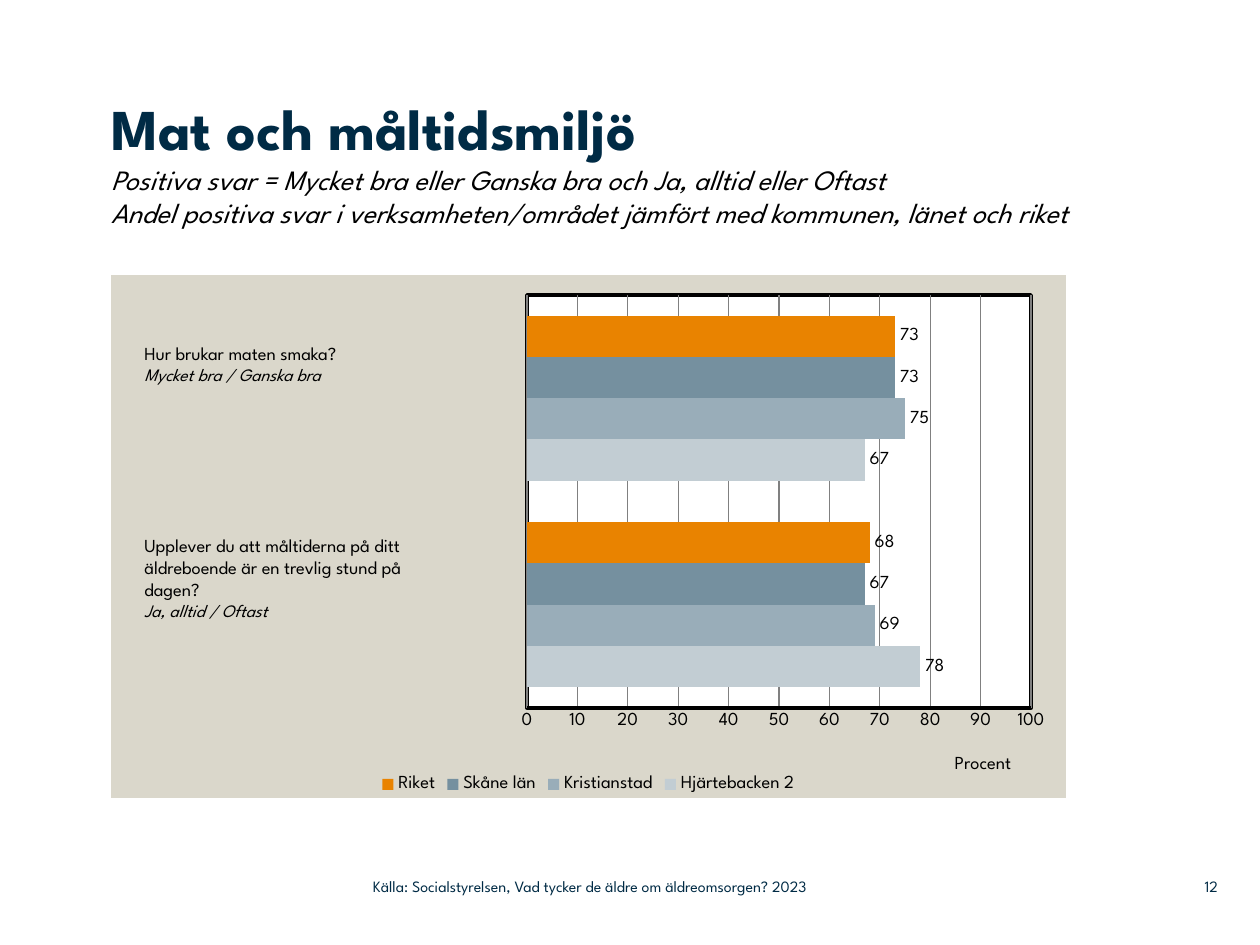
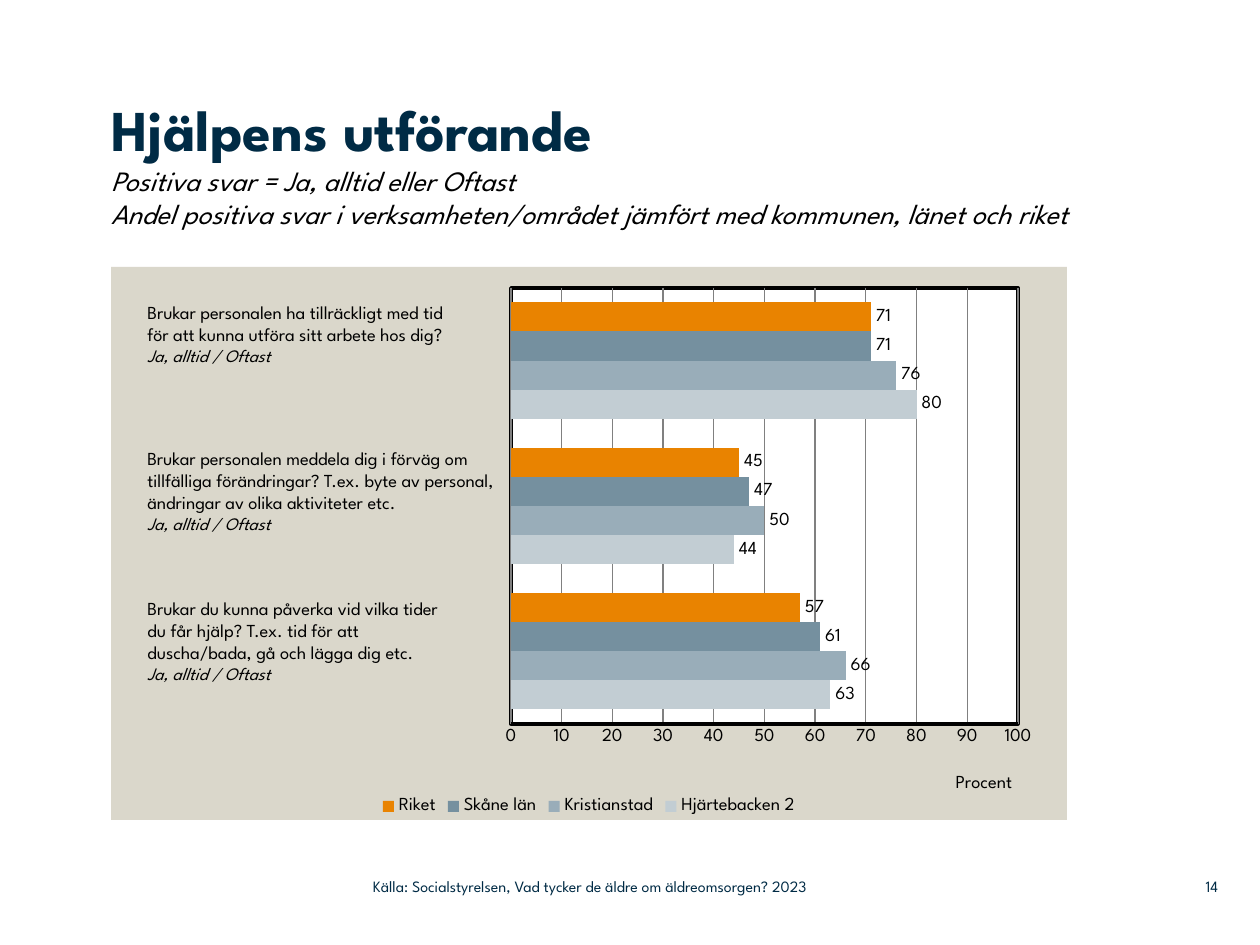
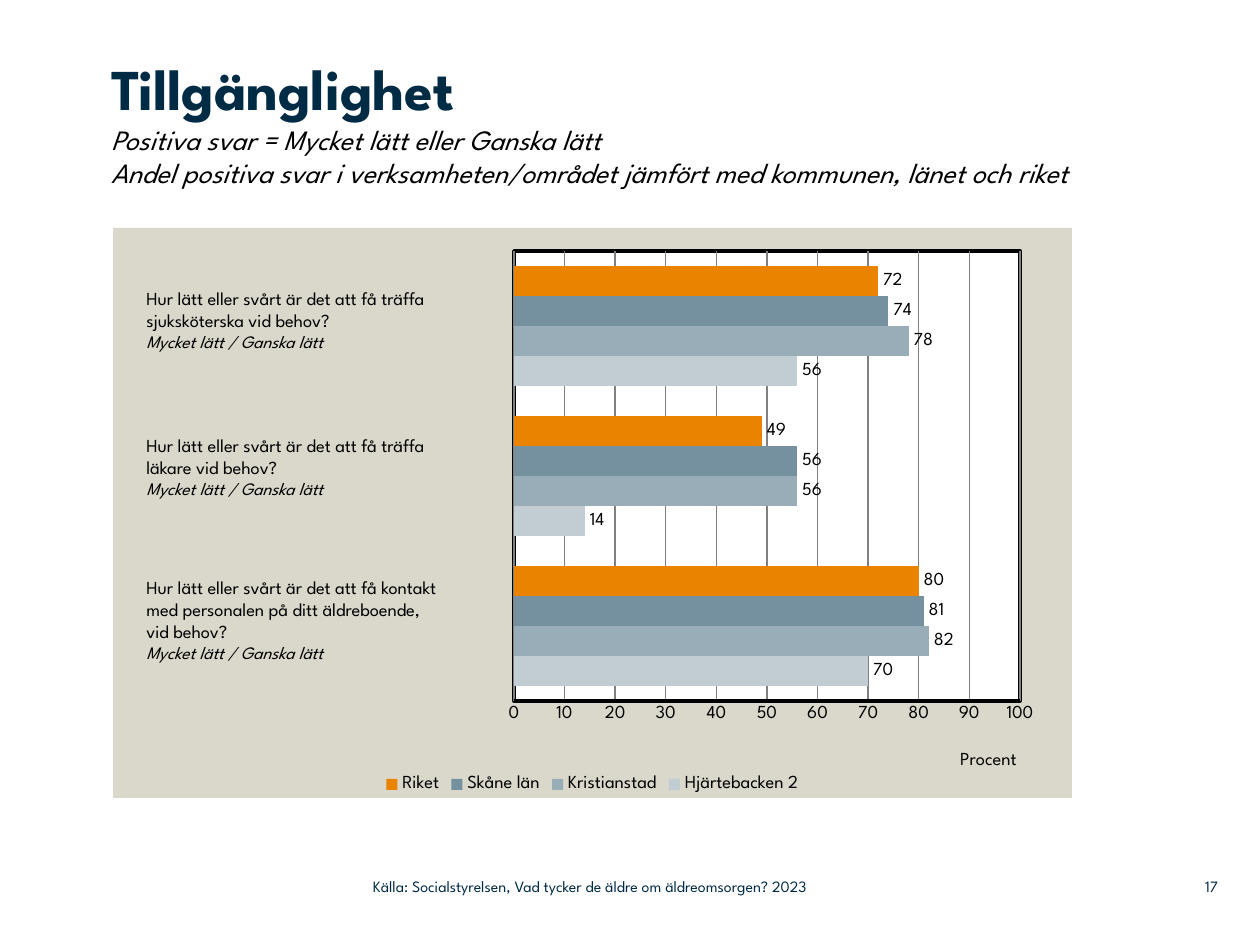
from dataclasses import dataclass
from copy import deepcopy

from lxml import etree
from pptx import Presentation
from pptx.chart.data import CategoryChartData
from pptx.dml.color import RGBColor
from pptx.enum.chart import (XL_CHART_TYPE, XL_LABEL_POSITION,
                             XL_LEGEND_POSITION, XL_TICK_MARK)
from pptx.enum.text import MSO_ANCHOR, MSO_AUTO_SIZE, PP_ALIGN
from pptx.oxml import parse_xml
from pptx.util import Emu, Pt

BARS = XL_CHART_TYPE.BAR_CLUSTERED
OUTSIDE_END = XL_LABEL_POSITION.OUTSIDE_END
LEGEND_BOTTOM = XL_LEGEND_POSITION.BOTTOM
NO_TICK = XL_TICK_MARK.NONE
TOP, MIDDLE = MSO_ANCHOR.TOP, MSO_ANCHOR.MIDDLE
FIXED, GROW = MSO_AUTO_SIZE.NONE, MSO_AUTO_SIZE.SHAPE_TO_FIT_TEXT
LEFT, RIGHT = PP_ALIGN.LEFT, PP_ALIGN.RIGHT

PX_PER_INCH = 126
TITLE_ONLY = 5
CHART_NS = "http://schemas.openxmlformats.org/drawingml/2006/chart"
DRAWING_NS = "http://schemas.openxmlformats.org/drawingml/2006/main"


@dataclass(frozen=True)
class Theme:
    font: str = "League Spartan"
    navy: str = "002B45"
    black: str = "000000"
    white: str = "FFFFFF"
    panel: str = "DAD7CB"
    grid: str = "808080"
    title_size: float = 33
    subtitle_size: float = 16
    body_size: float = 10.5
    answer_size: float = 10
    footer_size: float = 9


@dataclass
class Question:
    box: tuple      # left, top, width, height
    lines: list
    answer: str
    values: tuple   # one per region, top bar first


@dataclass
class Survey:
    number: int
    title: str
    positive: str
    title_box: tuple
    chart_box: tuple
    plot_box: tuple  # within the chart
    questions: list


THEME = Theme()
REGIONS = [("Riket", "E98300"), ("Skåne län", "75909F"),
           ("Kristianstad", "99ADB9"), ("Hjärtebacken 2", "C2CDD3")]
COMPARISON = ("Andel positiva svar i verksamheten/området jämfört med "
              "kommunen, länet och riket")
SOURCE = "Källa: Socialstyrelsen, Vad tycker de äldre om äldreomsorgen? 2023"
SOURCE_BOX = (373, 868, 558, 37)
NUMBER_BOX = (1159, 868, 59, 37)

SURVEYS = [
    Survey(12, "Mat och måltidsmiljö",
           "Positiva svar = Mycket bra eller Ganska bra och Ja, alltid eller Oftast",
           (111, 93, 1061, 181), (111, 275, 955, 523), (416, 20, 504, 413), [
               Question((132, 336, 349, 79), ["Hur brukar maten smaka?"],
                        "Mycket bra / Ganska bra", (73, 73, 75, 67)),
               Question((132, 528, 349, 123),
                        ["Upplever du att måltiderna på ditt äldreboende är "
                         "en trevlig stund på", "dagen?"],
                        "Ja, alltid / Oftast", (68, 67, 69, 78)),
           ]),
    Survey(14, "Hjälpens utförande", "Positiva svar = Ja, alltid eller Oftast",
           (111, 94, 982, 152), (111, 267, 956, 553), (400, 21, 507, 436), [
               Question((135, 295, 374, 102),
                        ["Brukar personalen ha tillräckligt med tid",
                         "för att kunna utföra sitt arbete hos dig?"],
                        "Ja, alltid / Oftast", (71, 71, 76, 80)),
               Question((135, 441, 377, 123),
                        ["Brukar personalen meddela dig i förväg om tillfälliga "
                         "förändringar? T.ex. byte av personal, ändringar av "
                         "olika aktiviteter etc."],
                        "Ja, alltid / Oftast", (45, 47, 50, 44)),
               Question((135, 591, 374, 102),
                        ["Brukar du kunna påverka vid vilka tider",
                         "du får hjälp? T.ex. tid för att",
                         "duscha/bada, gå och lägga dig etc."],
                        "Ja, alltid / Oftast", (57, 61, 66, 63)),
           ]),
    Survey(17, "Tillgänglighet", "Positiva svar = Mycket lätt eller Ganska lätt",
           (111, 53, 979, 175), (113, 228, 959, 570), (401, 23, 506, 450), [
               Question((134, 281, 377, 102),
                        ["Hur lätt eller svårt är det att få träffa "
                         "sjuksköterska vid behov?"],
                        "Mycket lätt / Ganska lätt", (72, 74, 78, 56)),
               Question((134, 428, 369, 102),
                        ["Hur lätt eller svårt är det att få träffa",
                         "läkare vid behov?"],
                        "Mycket lätt / Ganska lätt", (49, 56, 56, 14)),
               Question((134, 570, 379, 123),
                        ["Hur lätt eller svårt är det att få kontakt",
                         "med personalen på ditt äldreboende,", "vid behov?"],
                        "Mycket lätt / Ganska lätt", (80, 81, 82, 70)),
           ]),
]


# Lengths and text
def px(length):
    return Emu(round(length * 914400 / PX_PER_INCH))


def emu_box(box):
    return [px(length) for length in box]


def style_font(font, size, color=THEME.black, bold=False, italic=False):
    font.name = THEME.font
    font.size = Pt(size)
    font.bold = bold
    font.italic = italic
    font.color.rgb = RGBColor.from_string(color)


def add_run(paragraph, text, size, **style):
    run = paragraph.add_run()
    run.text = text
    style_font(run.font, size, **style)
    return run


def setup_frame(text_frame, anchor, auto_size, inset=True):
    text_frame.word_wrap = True
    text_frame.auto_size = auto_size
    text_frame.vertical_anchor = anchor
    if not inset:
        text_frame.margin_left = text_frame.margin_right = 0
        text_frame.margin_top = text_frame.margin_bottom = 0


def break_line(paragraph, run):
    """Add a line break as tall as the run before it."""
    paragraph.add_line_break()
    paragraph._p[-1].append(deepcopy(run._r.rPr))


# Title, questions and footer
def set_title(slide, survey):
    title = slide.shapes.title
    title.left, title.top, title.width, title.height = emu_box(survey.title_box)
    setup_frame(title.text_frame, TOP, FIXED, inset=False)
    paragraph = title.text_frame.paragraphs[0]
    paragraph.alignment = LEFT
    run = add_run(paragraph, survey.title, THEME.title_size,
                  color=THEME.navy, bold=True)
    for line in (survey.positive, COMPARISON):
        break_line(paragraph, run)
        run = add_run(paragraph, line, THEME.subtitle_size, italic=True)


def add_question(slide, question):
    text_frame = slide.shapes.add_textbox(*emu_box(question.box)).text_frame
    setup_frame(text_frame, TOP, GROW)
    paragraph = text_frame.paragraphs[0]
    for line in question.lines:
        add_run(paragraph, line, THEME.body_size)
        paragraph = text_frame.add_paragraph()
    add_run(paragraph, question.answer, THEME.answer_size, italic=True)


def add_footer_text(slide, box, text, alignment):
    text_frame = slide.shapes.add_textbox(*emu_box(box)).text_frame
    setup_frame(text_frame, MIDDLE, FIXED, inset=False)
    paragraph = text_frame.paragraphs[0]
    paragraph.alignment = alignment
    add_run(paragraph, text, THEME.footer_size, color=THEME.navy)


# Chart parts
def area_format(fill, line=None, line_points=0):
    outline = (f'<a:ln w="{Pt(line_points)}"><a:solidFill><a:srgbClr val="{line}"/>'
               '</a:solidFill></a:ln>' if line else '<a:ln><a:noFill/></a:ln>')
    return parse_xml(
        f'<c:spPr xmlns:c="{CHART_NS}" xmlns:a="{DRAWING_NS}"><a:solidFill>'
        f'<a:srgbClr val="{fill}"/></a:solidFill>{outline}</c:spPr>')


def place_part(parent, index, **settings):
    """Give a chart part a manual layout, as fractions of the chart."""
    for layout in parent.findall(f"{{{CHART_NS}}}layout"):
        parent.remove(layout)
    layout = etree.Element(f"{{{CHART_NS}}}layout")
    manual = etree.SubElement(layout, f"{{{CHART_NS}}}manualLayout")
    for name, value in settings.items():
        etree.SubElement(manual, f"{{{CHART_NS}}}{name}").set("val", str(value))
    parent.insert(index, layout)


def style_value_axis(axis):
    axis.minimum_scale, axis.maximum_scale, axis.major_unit = 0, 100, 10
    axis.major_tick_mark = axis.minor_tick_mark = NO_TICK
    axis.format.line.color.rgb = RGBColor.from_string(THEME.black)
    axis.format.line.width = Pt(2)
    axis.has_major_gridlines = True
    grid_line = axis.major_gridlines.format.line
    grid_line.color.rgb = RGBColor.from_string(THEME.grid)
    grid_line.width = Pt(0.75)
    style_font(axis.tick_labels.font, THEME.body_size)
    paragraph = axis.axis_title.text_frame.paragraphs[0]
    add_run(paragraph, "Procent", THEME.body_size)
    place_part(axis.axis_title._element, 1,
               xMode="edge", yMode="edge", x=0.88, y=0.91)


def style_series(plot):
    plot.vary_by_categories = False
    plot.gap_width = 100
    plot.overlap = 0
    for series, (_, color) in zip(plot.series, reversed(REGIONS)):
        series.format.fill.solid()
        series.format.fill.fore_color.rgb = RGBColor.from_string(color)
        labels = series.data_labels
        labels.show_value = True
        labels.position = OUTSIDE_END
        style_font(labels.font, THEME.body_size)


def add_survey_chart(slide, survey):
    # Bars stack upwards, so questions and regions go in from the bottom.
    questions = survey.questions[::-1]
    data = CategoryChartData()
    data.categories = [str(number + 1) for number in range(len(questions))]
    for index, (region, _) in reversed(list(enumerate(REGIONS))):
        data.add_series(region, [question.values[index] for question in questions])
    chart = slide.shapes.add_chart(BARS, *emu_box(survey.chart_box), data).chart
    chart.has_title = False
    style_font(chart.font, THEME.body_size)
    chart.category_axis.visible = False
    style_value_axis(chart.value_axis)
    style_series(chart.plots[0])

    chart.has_legend = True
    chart.legend.position = LEGEND_BOTTOM
    chart.legend.include_in_layout = False
    style_font(chart.legend.font, THEME.body_size)

    chart_part = chart._chartSpace.chart
    chart_part.addnext(area_format(THEME.panel))
    plot_area = chart_part.plotArea
    plot_area.append(area_format(THEME.white, THEME.black, 2))
    left, top, width, height = survey.plot_box
    _, _, chart_width, chart_height = survey.chart_box
    place_part(plot_area, 0, layoutTarget="inner", xMode="edge", yMode="edge",
               x=left / chart_width, y=top / chart_height,
               w=width / chart_width, h=height / chart_height)


def add_survey_slide(presentation, survey):
    slide = presentation.slides.add_slide(presentation.slide_layouts[TITLE_ONLY])
    add_survey_chart(slide, survey)
    set_title(slide, survey)
    for question in survey.questions:
        add_question(slide, question)
    add_footer_text(slide, NUMBER_BOX, str(survey.number), RIGHT)
    add_footer_text(slide, SOURCE_BOX, SOURCE, LEFT)


def main():
    presentation = Presentation()
    presentation.slide_width, presentation.slide_height = px(1260), px(945)
    for survey in SURVEYS:
        add_survey_slide(presentation, survey)
    presentation.save("out.pptx")


if __name__ == "__main__":
    main()
